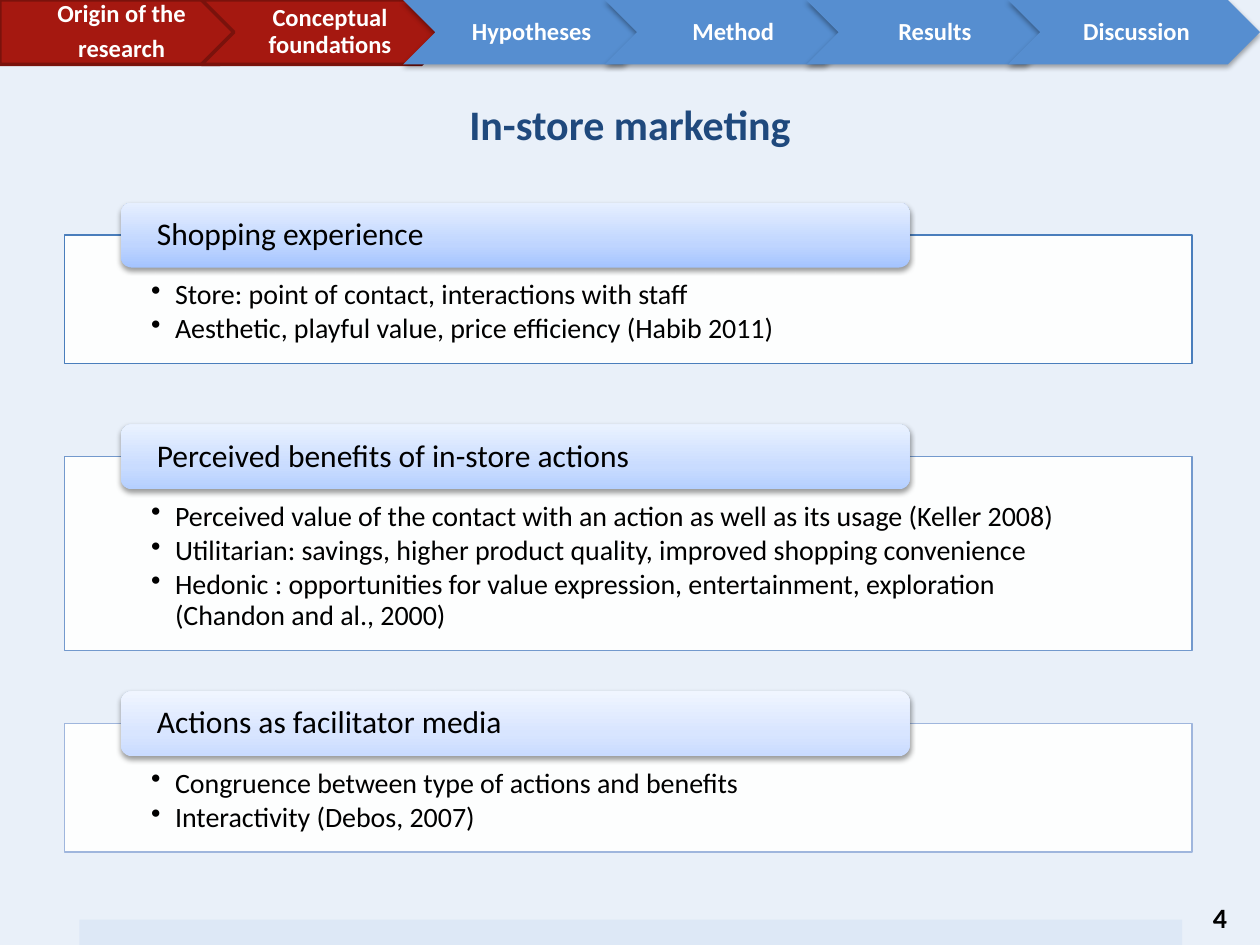
from copy import deepcopy
from lxml.etree import SubElement as Sub
from pptx import Presentation
from pptx.dml.color import RGBColor as RGB
from pptx.enum.shapes import MSO_SHAPE as Kind
from pptx.enum.text import MSO_ANCHOR as Anchor, PP_ALIGN as Align
from pptx.oxml.ns import qn
from pptx.util import Cm, Pt

# Content
TITLE = "In-store marketing"
PAGE = "4"
STEPS = [["Origin of the", "research"], ["Conceptual foundations"], ["Hypotheses"],
         ["Method"], ["Results"], ["Discussion"]]
DONE = 2  # steps shown in red
# heading, points, panel top and height in cm, outline, gradient from bottom to top
PANELS = [
    ("Shopping experience",
     ["Store: point of contact, interactions with staff",
      "Aesthetic, playful value, price efficiency (Habib 2011)"],
     4.74, 2.59, "4A7EBC", ("A4C4FF", "BFD5FF", "E6EFFF")),
    ("Perceived benefits of in-store actions",
     ["Perceived value of the contact with an action as well as its usage (Keller 2008)",
      "Utilitarian: savings, higher product quality, improved shopping convenience",
      "Hedonic : opportunities for value expression, entertainment, exploration "
      "(Chandon and al., 2000)"],
     9.21, 3.91, "7399CD", ("B4CFFF", "C9DCFF", "EAF2FF")),
    ("Actions as facilitator media",
     ["Congruence between type of actions and benefits",
      "Interactivity (Debos, 2007)"],
     14.59, 2.59, "9FB6DD", ("C9DBFF", "D8E5FF", "F0F5FF")),
]

THEME = dict(font="Calibri", back="E9F0F9", foot="DDE8F6", title="1F497D",
             text="000000", light="FFFFFF", panel="FDFEFE", done="A51810",
             edge="7A120C", todo="568ED0",
             title_size=24, head_size=18, body_size=16, step_size=14)
WIDE, HIGH = 25.4, 19.05
STEP_W, STEP_H = 5.08, 1.3
HEAD_H = 1.31


def color(name):
    return RGB.from_string(THEME.get(name, name))


def add_box(kind, x, y, w, h, fill=None, line=None, width=0.75):
    box = slide.shapes.add_shape(kind, Cm(x), Cm(y), Cm(w), Cm(h))
    box.shadow.inherit = False
    if fill:
        box.fill.solid()
        box.fill.fore_color.rgb = color(fill)
    if line:
        box.line.color.rgb = color(line)
        box.line.width = Pt(width)
    else:
        box.line.fill.background()
    return box


def add_shade(box, alpha):
    effects = box._element.spPr.find(qn("a:effectLst"))
    shade = Sub(effects, qn("a:outerShdw"), blurRad=str(Pt(3.1)), dist=str(Pt(1.7)),
                dir="5400000", rotWithShape="0")
    tone = Sub(shade, qn("a:srgbClr"), val=THEME["text"])
    Sub(tone, qn("a:alpha"), val=str(alpha * 1000))


def blend(box, tones):
    box.fill.gradient()
    box.fill.gradient_angle = 90
    stops = box._element.spPr.find(".//" + qn("a:gsLst"))
    stops.insert(1, deepcopy(stops[0]))
    for stop, place, tone in zip(box.fill.gradient_stops, (0, 0.35, 1), tones):
        stop.position = place
        stop.color.rgb = color(tone)


def write(shape, lines, size, tone="text", bold=False, align=Align.LEFT,
          anchor=Anchor.MIDDLE, pad=None, after=0, space=1.0, dots=False):
    frame = shape.text_frame
    frame.word_wrap = True
    frame.vertical_anchor = anchor
    if pad:
        (frame.margin_left, frame.margin_top,
         frame.margin_right, frame.margin_bottom) = map(Cm, pad)
    frame.text = "\n".join(lines)
    for para in frame.paragraphs:
        para.alignment = align
        para.line_spacing = space
        para.space_after = Pt(after * THEME[size])
        font = para.font
        font.name, font.size, font.bold = THEME["font"], Pt(THEME[size]), bold
        font.color.rgb = color(tone)
        if dots:
            props = para._p.get_or_add_pPr()
            props.set("marL", str(Cm(0.48)))
            props.set("indent", str(-Cm(0.48)))
            bullet = Sub(props, qn("a:buChar"), char="•")
            props.find(qn("a:defRPr")).addprevious(bullet)


# Slide and background
deck = Presentation()
deck.slide_width, deck.slide_height = Cm(WIDE), Cm(HIGH)
slide = deck.slides.add_slide(deck.slide_layouts[5])
slide.background.fill.solid()
slide.background.fill.fore_color.rgb = color("back")

# Footer and page number
add_box(Kind.RECTANGLE, 1.6, 18.54, 22.23, 0.51, "foot")
page = slide.shapes.add_textbox(Cm(24.2), Cm(18.03), Cm(1.2), Cm(1.02))
write(page, [PAGE], "body_size", bold=True, anchor=Anchor.TOP)

# Title
title = slide.shapes.title
title.left, title.top, title.width, title.height = Cm(9.15), Cm(1.85), Cm(7.1), Cm(1.28)
write(title, [TITLE], "title_size", "title", True, Align.CENTER)
title.text_frame.word_wrap = False

# Progress steps
pitch = (WIDE - STEP_W) / (len(STEPS) - 1)
for i, lines in enumerate(STEPS):
    kind = Kind.CHEVRON if i else Kind.PENTAGON
    look = ("done", "edge", 2) if i < DONE else ("todo",)
    step = add_box(kind, i * pitch, 0, STEP_W, STEP_H, *look)
    if i >= DONE:
        add_shade(step, 35)
    write(step, lines, "step_size", "light", True, Align.CENTER,
          pad=(0.15 if i else 0.2, 0.1, 0.05, 0.1), after=0.35, space=0.9)

# Panels with their headings
for name, points, top, high, edge, tones in PANELS:
    panel = add_box(Kind.RECTANGLE, 1.3, top, 22.73, high, "panel", edge)
    write(panel, points, "body_size", anchor=Anchor.TOP, pad=(1.75, 0.91, 1.75, 0.3),
          after=0.15, space=0.9, dots=True)
    head = add_box(Kind.ROUNDED_RECTANGLE, 2.44, top - HEAD_H / 2, 15.9, HEAD_H)
    blend(head, tones)
    add_shade(head, 38)
    write(head, [name], "head_size", pad=(0.66, 0.08, 0.66, 0.08), after=0.35, space=0.9)

deck.save("out.pptx")
